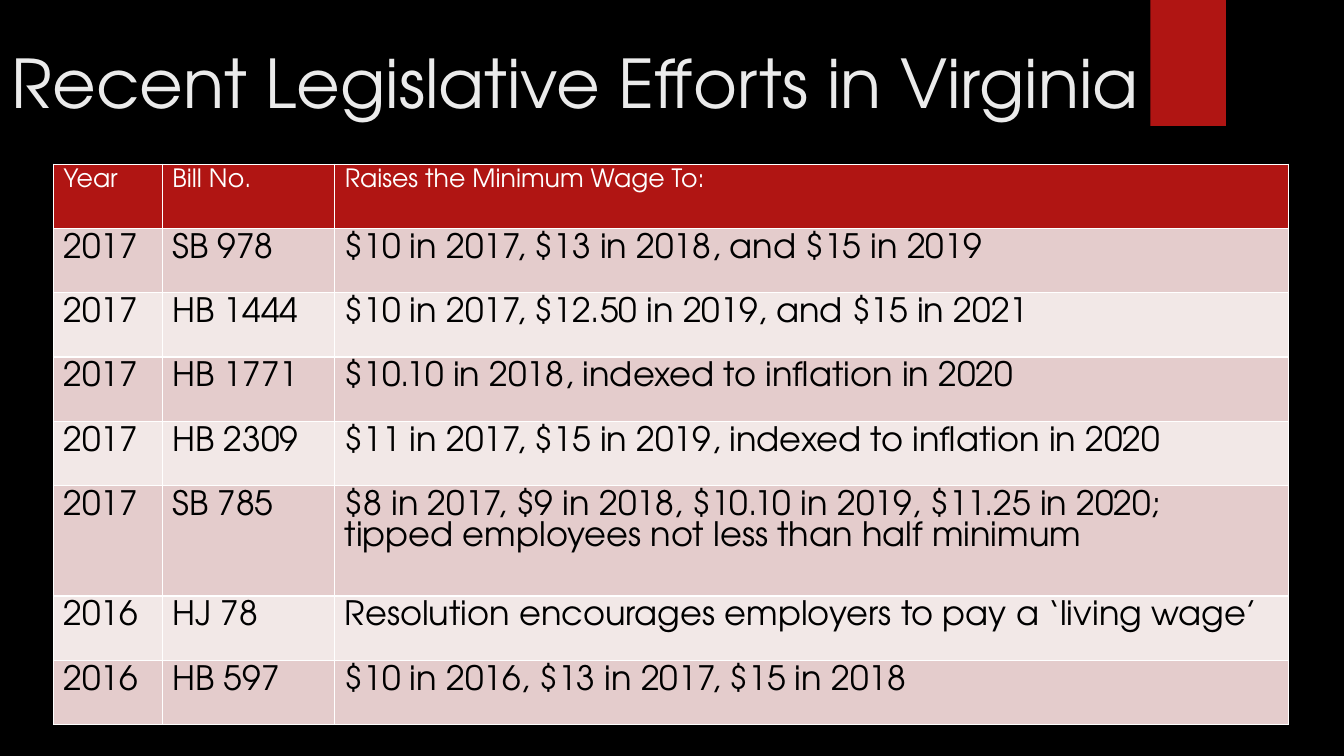
from lxml.etree import SubElement
from pptx import Presentation
from pptx.dml.color import RGBColor
from pptx.enum.shapes import MSO_SHAPE
from pptx.enum.text import MSO_ANCHOR
from pptx.oxml.ns import qn
from pptx.util import Inches, Pt

FONT = "TeX Gyre Adventor"
BLACK, WHITE, RED, PALE = "000000", "FFFFFF", "B01513", "EBEBEB"
BANDS = ("E4CCCC", "F2E8E7")
COLUMN_SHARES = (1.08, 1.71, 9.46)
ROW_SHARES = (0.64,) * 5 + (1.1,) + (0.64,) * 2
BILLS = (
    ("Year", "Bill No.", "Raises the Minimum Wage To:"),
    ("2017", "SB 978", "$10 in 2017, $13 in 2018, and $15 in 2019"),
    ("2017", "HB 1444", "$10 in 2017, $12.50 in 2019, and $15 in 2021"),
    ("2017", "HB 1771", "$10.10 in 2018, indexed to inflation in 2020"),
    ("2017", "HB 2309", "$11 in 2017, $15 in 2019, indexed to inflation in 2020"),
    ("2017", "SB 785", "$8 in 2017, $9 in 2018, $10.10 in 2019, $11.25 in 2020; "
                       "tipped employees not less than half minimum"),
    ("2016", "HJ 78", "Resolution encourages employers to pay a ‘living wage’"),
    ("2016", "HB 597", "$10 in 2016, $13 in 2017, $15 in 2018"),
)


def paint(fill, color):
    fill.solid()
    fill.fore_color.rgb = RGBColor.from_string(color)


def write(text_frame, text, size, color, line_spacing=None):
    paragraph = text_frame.paragraphs[0]
    paragraph.text = text
    paragraph.line_spacing = line_spacing
    paragraph.font.name = FONT
    paragraph.font.size = Pt(size)
    paint(paragraph.font.fill, color)


def add_cell_borders(cell, widths):
    properties = cell._tc.get_or_add_tcPr()
    for position, (side, width) in enumerate(widths.items()):
        line = properties.makeelement(qn(f"a:{side}"), {"w": str(Pt(width))})
        SubElement(SubElement(line, qn("a:solidFill")), qn("a:srgbClr"), val=WHITE)
        properties.insert(position, line)


def add_ribbon(slide, box):
    ribbon = slide.shapes.add_shape(MSO_SHAPE.RECTANGLE, *map(Inches, box))
    ribbon.shadow.inherit = False
    paint(ribbon.fill, RED)
    ribbon.line.fill.background()


def add_title(slide, box):
    text_frame = slide.shapes.add_textbox(*map(Inches, box)).text_frame
    text_frame.word_wrap = True
    text_frame.vertical_anchor = MSO_ANCHOR.MIDDLE
    write(text_frame, "Recent Legislative Efforts in Virginia", 48, PALE)


def add_bill_table(slide, box):
    left, top, width, height = box
    table = slide.shapes.add_table(
        len(BILLS), len(COLUMN_SHARES), *map(Inches, box)).table
    for column, share in zip(table.columns, COLUMN_SHARES):
        column.width = Inches(width * share / sum(COLUMN_SHARES))
    for row, share in zip(table.rows, ROW_SHARES):
        row.height = Inches(height * share / sum(ROW_SHARES))

    for row_index, bill in enumerate(BILLS):
        header = row_index == 0
        for column_index, text in enumerate(bill):
            cell = table.cell(row_index, column_index)
            paint(cell.fill, RED if header else BANDS[(row_index - 1) % 2])
            add_cell_borders(cell, {"lnL": 1, "lnR": 1, "lnT": 1, "lnB": 1})
            write(cell.text_frame, text, 18 if header else 24,
                  WHITE if header else BLACK)


def main():
    presentation = Presentation()
    presentation.slide_width, presentation.slide_height = Inches(13.33), Inches(7.5)
    slide = presentation.slides.add_slide(presentation.slide_layouts[6])
    paint(slide.background.fill, BLACK)
    add_ribbon(slide, (11.41, 0, 0.75, 1.25))
    add_title(slide, (0.02, 0.34, 11.84, 0.94))
    add_bill_table(slide, (0.53, 1.63, 12.25, 5.56))
    presentation.save("out.pptx")


if __name__ == "__main__":
    main()
